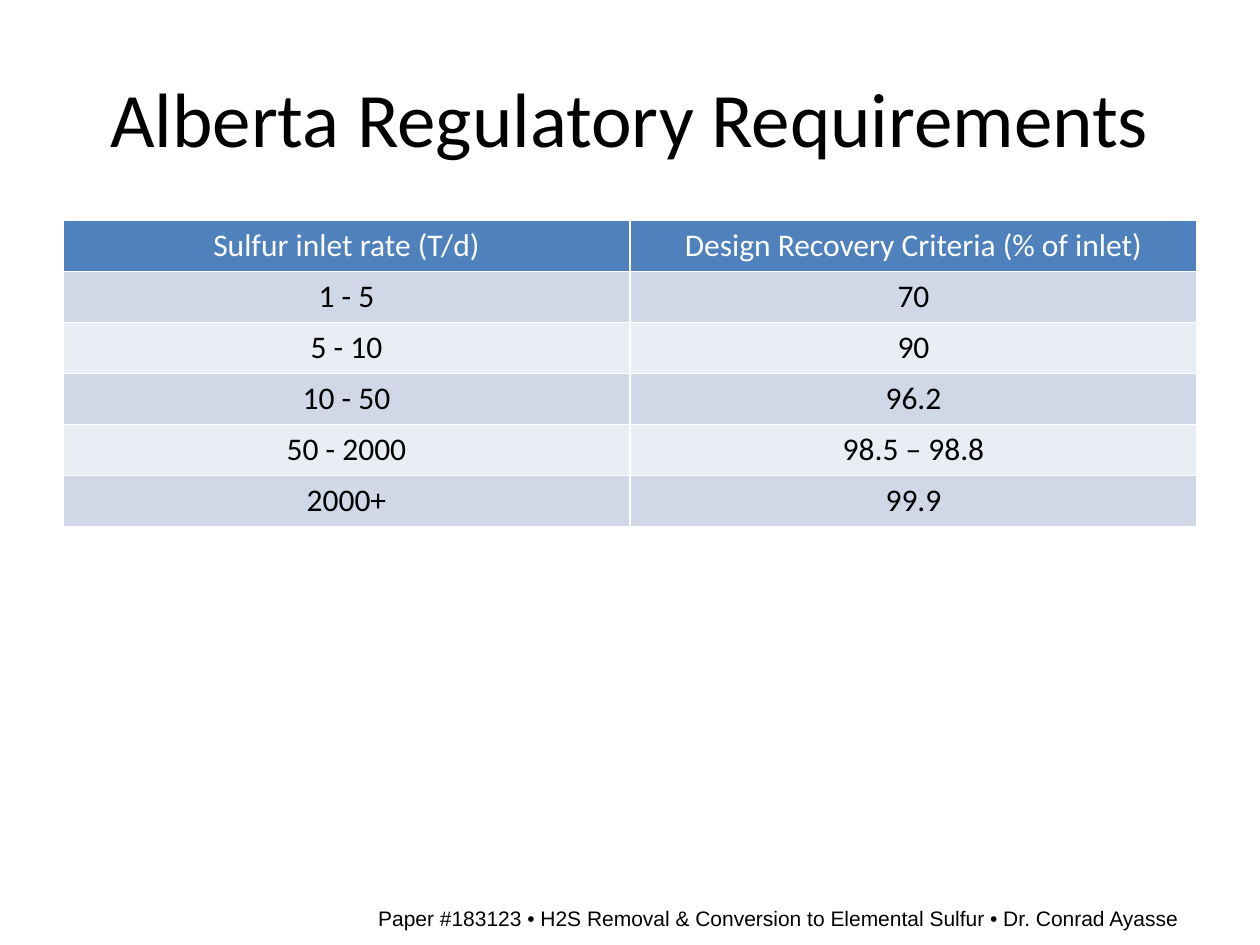
from pptx import Presentation
from pptx.dml.color import RGBColor
from pptx.enum.text import MSO_ANCHOR, PP_ALIGN
from pptx.util import Inches, Pt

BLACK = RGBColor(0x00, 0x00, 0x00)
WHITE = RGBColor(0xFF, 0xFF, 0xFF)
HEADER_BLUE = RGBColor(0x4F, 0x81, 0xBD)
BAND_DARK = RGBColor(0xD0, 0xD8, 0xE8)
BAND_LIGHT = RGBColor(0xE9, 0xED, 0xF4)

TITLE = "Alberta Regulatory Requirements"
FOOTER = "Paper #183123 • H2S Removal & Conversion to Elemental Sulfur • Dr. Conrad Ayasse"
CRITERIA = [
    ("Sulfur inlet rate (T/d)", "Design Recovery Criteria (% of inlet)"),
    ("1 - 5", "70"),
    ("5 - 10", "90"),
    ("10 - 50", "96.2"),
    ("50 - 2000", "98.5 – 98.8"),
    ("2000+", "99.9"),
]


def write_centred(frame, text, size, font_name, color):
    """Fill a text frame with one centred line."""
    frame.text = text
    line = frame.paragraphs[0]
    line.alignment = PP_ALIGN.CENTER
    font = line.runs[0].font
    font.size = Pt(size)
    font.name = font_name
    font.bold = False
    font.color.rgb = color


def add_line(slide, box, text, size, font_name, anchor):
    """Place a line of black text in the given box."""
    frame = slide.shapes.add_textbox(*box).text_frame
    frame.word_wrap = True
    frame.vertical_anchor = anchor
    write_centred(frame, text, size, font_name, BLACK)


def add_criteria_table(slide, box, rows):
    """Place the banded recovery table in the given box."""
    table = slide.shapes.add_table(len(rows), len(rows[0]), *box).table
    for row_index, row in enumerate(rows):
        if row_index == 0:
            fill_color, text_color = HEADER_BLUE, WHITE
        else:
            fill_color = BAND_DARK if row_index % 2 else BAND_LIGHT
            text_color = BLACK
        for column_index, value in enumerate(row):
            cell = table.cell(row_index, column_index)
            cell.fill.solid()
            cell.fill.fore_color.rgb = fill_color
            write_centred(cell.text_frame, value, 18, "Calibri", text_color)


def main():
    """Build and save the slide."""
    presentation = Presentation()
    presentation.slide_width = Inches(10)
    presentation.slide_height = Inches(7.5)
    slide = presentation.slides.add_slide(presentation.slide_layouts[6])

    title_box = Inches(0.5), Inches(0.3), Inches(9), Inches(1.25)
    table_box = Inches(0.5), Inches(1.75), Inches(9), Inches(2.43)
    footer_box = Inches(2.47), Inches(7.14), Inches(7.42), Inches(0.25)

    add_line(slide, title_box, TITLE, 44, "Calibri", MSO_ANCHOR.MIDDLE)
    add_criteria_table(slide, table_box, CRITERIA)
    add_line(slide, footer_box, FOOTER, 12, "Arial", MSO_ANCHOR.TOP)
    presentation.save("out.pptx")


if __name__ == "__main__":
    main()
